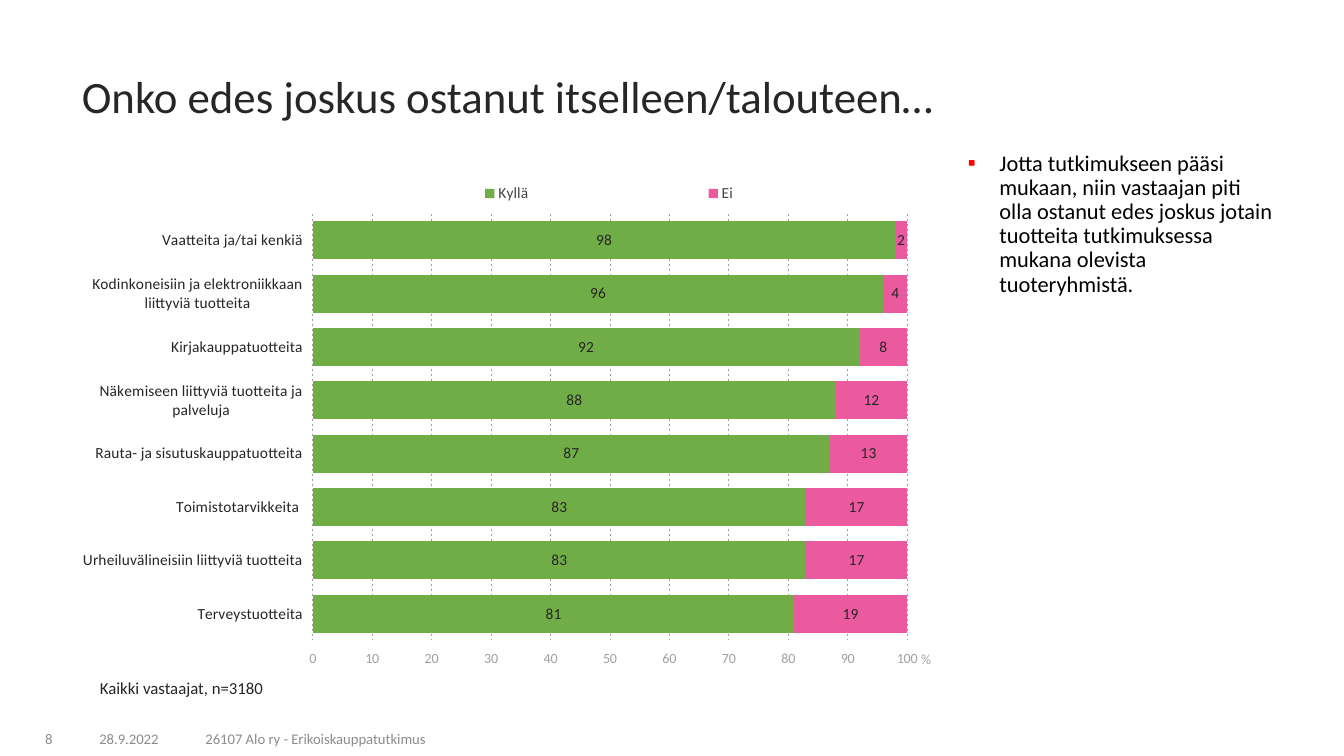
from lxml.etree import SubElement
from pptx import Presentation
from pptx.chart.data import CategoryChartData
from pptx.dml.color import RGBColor
from pptx.enum.chart import (
    XL_CHART_TYPE as ChartType, XL_LABEL_POSITION as LabelPosition,
    XL_LEGEND_POSITION as LegendPosition,
    XL_TICK_LABEL_POSITION as TickLabels, XL_TICK_MARK as TickMark)
from pptx.enum.dml import MSO_LINE_DASH_STYLE as Dash
from pptx.enum.text import MSO_ANCHOR as Anchor, PP_ALIGN as Align
from pptx.oxml.ns import qn
from pptx.util import Pt

FONT = "Calibri"
DARK, GREY, FOOTER = "262626", "A0A0A0", "8C8C8C"
color = RGBColor.from_string


def add_text(text, left, top, width, height, size=12, ink=DARK,
             align=Align.LEFT, anchor=Anchor.TOP, spacing=None, bullet=None):
    box = page.shapes.add_textbox(Pt(left), Pt(top), Pt(width), Pt(height))
    frame = box.text_frame
    frame.word_wrap = True
    frame.vertical_anchor = anchor
    para = frame.paragraphs[0]
    para.alignment = align
    if spacing:
        para.line_spacing = spacing
    if bullet:
        props = para._p.get_or_add_pPr()
        props.set("marL", str(Pt(22.5)))
        props.set("indent", str(-Pt(22.5)))
        SubElement(SubElement(props, qn("a:buClr")), qn("a:srgbClr"), val="FF0000")
        SubElement(props, qn("a:buFont"), typeface=FONT)
        SubElement(props, qn("a:buChar"), char=bullet)
    span = para.add_run()
    span.text = text
    span.font.name = FONT
    span.font.size = Pt(size)
    span.font.color.rgb = color(ink)


def place(parent, index, target=None, **fractions):
    """Set a manual layout, in fractions of the chart area."""
    for old in parent.findall(qn("c:layout")):
        parent.remove(old)
    layout = SubElement(parent, qn("c:layout"))
    parent.insert(index, layout)
    manual = SubElement(layout, qn("c:manualLayout"))
    if target:
        SubElement(manual, qn("c:layoutTarget"), val=target)
    for mode in ("xMode", "yMode"):
        SubElement(manual, qn("c:" + mode), val="edge")
    for name, value in fractions.items():
        SubElement(manual, qn("c:" + name), val=str(value))


deck = Presentation()
deck.slide_width, deck.slide_height = Pt(960), Pt(540)
page = deck.slides.add_slide(deck.slide_layouts[6])

# Footer
footer = dict(size=10.5, ink=FOOTER, anchor=Anchor.BOTTOM)
add_text("28.9.2022", 47.5, 515.5, 89.3, 21.6, align=Align.CENTER, **footer)
add_text("26107 Alo ry - Erikoiskauppatutkimus", 139.7, 515.5, 426, 21.6, **footer)
add_text("8", 2, 515.5, 42.5, 21.6, align=Align.RIGHT, **footer)

# Title
add_text("Onko edes joskus ostanut itselleen/talouteen…", 51.4, 46, 869, 49,
         size=32, anchor=Anchor.MIDDLE, spacing=0.9)

# Chart data
bought = {
    "Vaatteita ja/tai kenkiä": 98,
    "Kodinkoneisiin ja elektroniikkaan liittyviä tuotteita": 96,
    "Kirjakauppatuotteita": 92,
    "Näkemiseen liittyviä tuotteita ja palveluja": 88,
    "Rauta- ja sisutuskauppatuotteita": 87,
    "Toimistotarvikkeita ": 83,
    "Urheiluvälineisiin liittyviä tuotteita": 83,
    "Terveystuotteita": 81,
}
data = CategoryChartData()
data.categories = list(bought)
data.add_series("Kyllä", list(bought.values()))
data.add_series("Ei", [100 - share for share in bought.values()])

# Stacked bars
chart = page.shapes.add_chart(ChartType.BAR_STACKED, Pt(51.4), Pt(105),
                              Pt(619), Pt(377.5), data).chart
chart.has_title = False
chart.font.name = FONT
chart.font.size = Pt(12)
place(chart._chartSpace.chart.plotArea, 0, target="inner",
      x=0.278, y=0.126, w=0.686, h=0.808)
plot = chart.plots[0]
plot.gap_width, plot.overlap = 40, 100
plot.vary_by_categories = False
plot.has_data_labels = True
labels = plot.data_labels
labels.show_value = True
labels.position = LabelPosition.CENTER
labels.number_format = "#,##0"
labels.number_format_is_linked = False
for series, fill in zip(plot.series, ("70AD47", "EB599E")):
    series.format.fill.solid()
    series.format.fill.fore_color.rgb = color(fill)
    series.invert_if_negative = False

# Legend
chart.has_legend = True
legend = chart.legend
legend.position = LegendPosition.TOP
legend.include_in_layout = False
place(legend._element, 1, x=0.275, y=0.058, w=0.69, h=0.06)

# Axes: categories run downwards, so the high side of the plot is its foot
categories, values = chart.category_axis, chart.value_axis
for axis in (categories, values):
    axis.major_tick_mark = axis.minor_tick_mark = TickMark.NONE
    axis.format.line.fill.background()
categories.reverse_order = True
categories.tick_label_position = TickLabels.LOW
categories.has_major_gridlines = False
values.tick_label_position = TickLabels.HIGH
values.minimum_scale, values.maximum_scale, values.major_unit = 0, 100.01, 10
values.tick_labels.number_format = "General"
values.tick_labels.number_format_is_linked = False
values.has_major_gridlines = True
grid = values.major_gridlines.format.line
grid.color.rgb = color(GREY)
grid.width = Pt(0.5)
grid.dash_style = Dash.DASH

# Unit beside the value axis
unit = values.axis_title
unit.text_frame.text = "%"
place(unit._element, 1, x=0.977, y=0.947)
unit_font = unit.text_frame.paragraphs[0].runs[0].font
unit_font.bold = False

# Chart fonts
for font, size, ink in ((labels.font, 11, DARK), (legend.font, 11, "444444"),
                        (categories.tick_labels.font, 11, DARK),
                        (values.tick_labels.font, 10, GREY), (unit_font, 10, GREY)):
    font.name = FONT
    font.size = Pt(size)
    font.color.rgb = color(ink)

# Comment and base
add_text("Jotta tutkimukseen pääsi mukaan, niin vastaajan piti olla ostanut edes "
         "joskus jotain tuotteita tutkimuksessa mukana olevista tuoteryhmistä.",
         684.3, 105, 236, 401, size=16, ink="000000", spacing=0.9, bullet="▪")
add_text("Kaikki vastaajat, n=3180", 64.3, 482, 172, 20, spacing=0.9)

deck.save("out.pptx")
